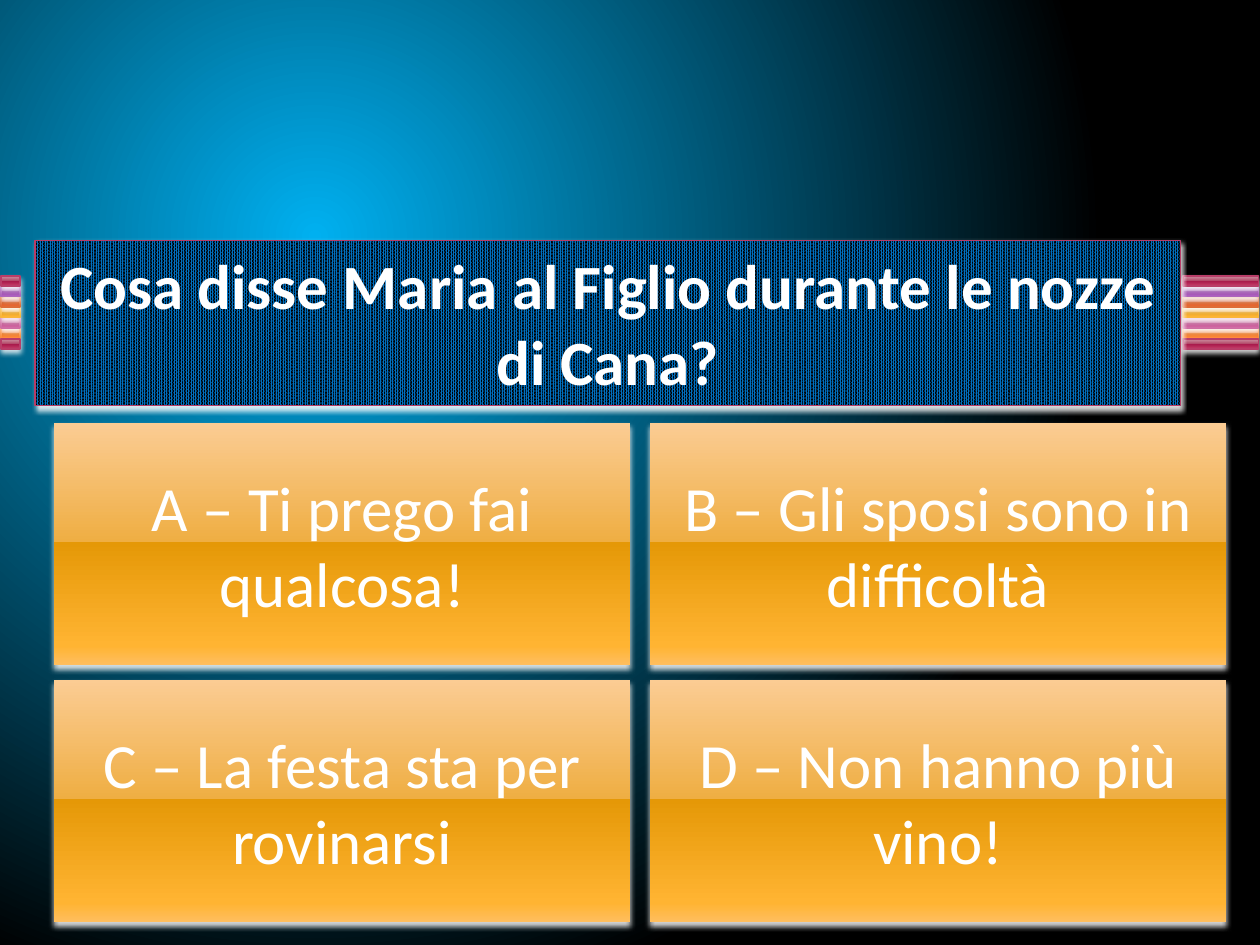
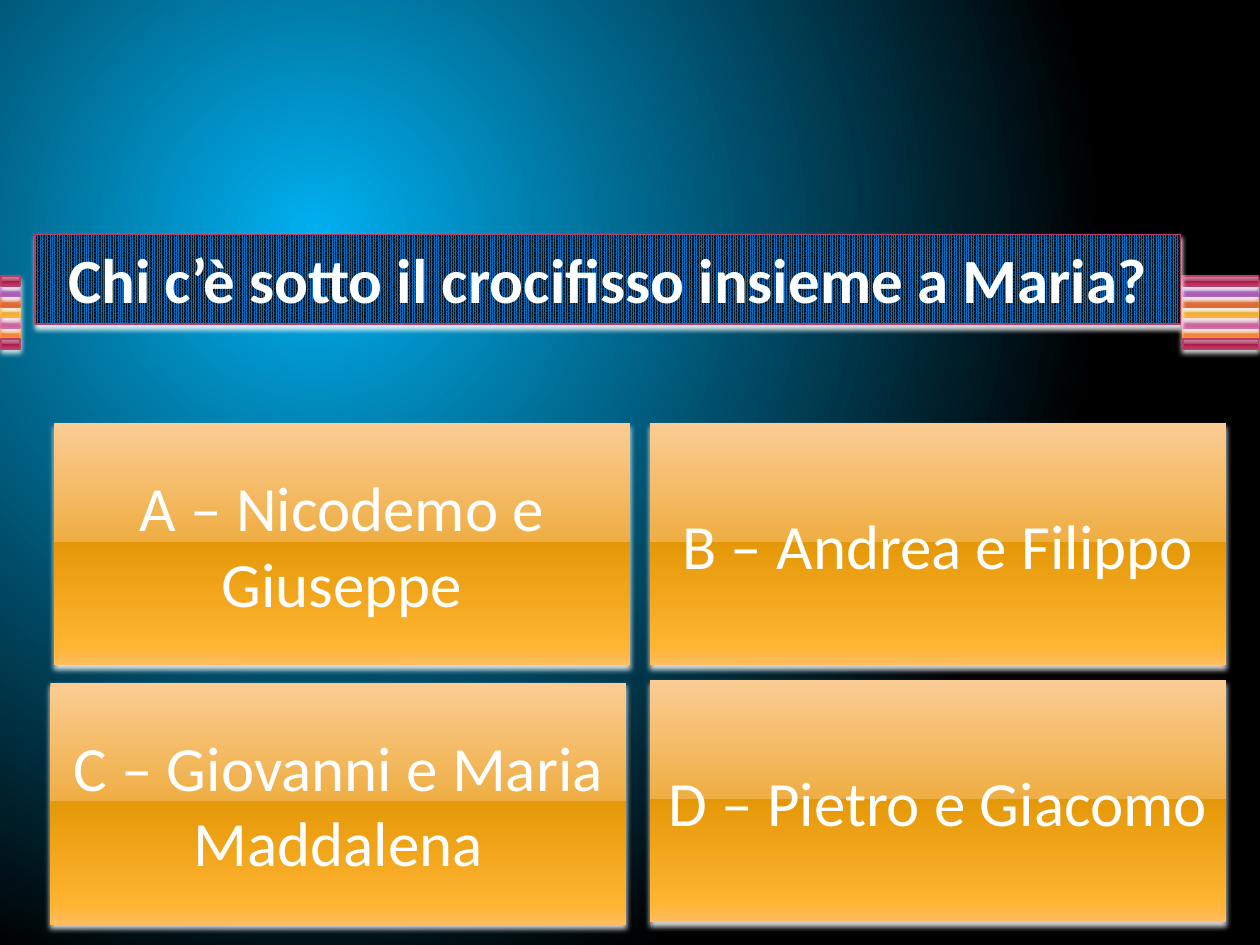
from dataclasses import dataclass

from lxml.etree import SubElement
from pptx import Presentation
from pptx.dml.color import RGBColor
from pptx.enum.dml import MSO_PATTERN
from pptx.enum.shapes import MSO_SHAPE as SHAPE
from pptx.enum.text import MSO_ANCHOR as ANCHOR, MSO_AUTO_SIZE as AUTO_SIZE, PP_ALIGN as ALIGN
from pptx.oxml.ns import qn
from pptx.util import Inches, Pt


@dataclass(frozen=True)
class Theme:
    font: str = "Calibri"
    size: int = 36
    text: str = "FFFFFF"
    shadow: str = "FFFFFF"
    glow: str = "00B0F0"
    dark: str = "000000"
    title_fill: str = "0070C0"
    outline: float = 0.9
    stop_places: tuple = (0, 49, 49, 92, 100)


@dataclass(frozen=True)
class Gloss:
    line: str
    stops: tuple


THEME = Theme()

CRIMSON = Gloss("B83D68", ("CE94A2", "B34869", "A61749", "C13764", "CA5D7C"))
PURPLE = Gloss("AC66BB", ("C6A2D0", "A666B4", "8F3EA1", "AD5DBF", "BA76CA"))
RUST = Gloss("DE6C36", ("E7A493", "D66B42", "CC4809", "E9642C", "F07B55"))
AMBER = Gloss("F9B639", ("FBCC93", "EFAE43", "E59807", "FFB432", "FFBE5F"))
PINK = Gloss("CF6DA4", ("DDA4C1", "C66B9D", "B34181", "D361A0", "DC79AE"))
ORANGE = Gloss("FA8D3D", ("FBB494", "F08745", "E5670B", "FF8736", "FF9961"))

# Stripes as (row, colour), from back to front
STRIPES = [(5, ORANGE), (4, PINK), (3, AMBER), (2, RUST), (1, PURPLE), (0, CRIMSON), (6, CRIMSON)]
STRIPE_TOP, STRIPE_SPAN, STRIPE_HEIGHT = 2.19, 0.5, 0.08
STRIPE_SIDES = [(0.01, 0.15), (9.39, 0.6)]  # left, width

# Two by two grid of answers
GRID_LEFT, GRID_TOP = 0.43, 3.36
ANSWER_W, ANSWER_H = 4.57, 1.92
STEP_X, STEP_Y = 4.73, 2.04

# Question, top and height of its box, answers, offsets of single answers
QUIZ = [
    ("Cosa disse Maria al Figlio durante le nozze di Cana?", 1.91, 1.31,
     ["A – Ti prego fai qualcosa!", "B – Gli sposi sono in difficoltà",
      "C – La festa sta per rovinarsi", "D – Non hanno più vino!"], {}),
    ("Chi c’è sotto il crocifisso insieme a Maria?", 1.86, 0.71,
     ["A – Nicodemo e Giuseppe", "B – Andrea e Filippo",
      "C – Giovanni e Maria Maddalena", "D – Pietro e Giacomo"], {2: (-0.03, 0.02)}),
]


def rgb(value):
    return RGBColor.from_string(value)


def set_gradient(fill, owner, stops):
    """Give the fill any number of stops and return its XML element."""
    fill.gradient()
    grad = owner.find(".//" + qn("a:gradFill"))
    grad.clear()
    gs_list = SubElement(grad, qn("a:gsLst"))
    for place, color in stops:
        gs = SubElement(gs_list, qn("a:gs"), pos=str(place * 1000))
        SubElement(gs, qn("a:srgbClr"), val=color)
    return grad


class QuizDeck:
    def __init__(self, theme):
        self.theme = theme
        self.prs = Presentation()
        self.prs.slide_width, self.prs.slide_height = Inches(10), Inches(7.5)
        self.slide = None
        self.background()

    def background(self):
        master, t = self.prs.slide_master, self.theme
        grad = set_gradient(master.background.fill, master.element, [(0, t.glow), (100, t.dark)])
        circle = SubElement(grad, qn("a:path"), path="circle")
        SubElement(circle, qn("a:fillToRect"), l="50000", t="50000", r="100000", b="100000")

    def new_slide(self):
        self.slide = self.prs.slides.add_slide(self.prs.slide_layouts[6])

    def box(self, shapes, left, top, width, height, line=None):
        sp = shapes.add_shape(SHAPE.RECTANGLE, *map(Inches, (left, top, width, height)))
        if line:
            sp.line.color.rgb = rgb(line)
            sp.line.width = Pt(self.theme.outline)
        else:
            sp.line.fill.background()
        self.shadow(sp)
        return sp

    def shadow(self, sp):
        sp.shadow.inherit = False
        effects = sp.element.spPr.find(qn("a:effectLst"))
        outer = SubElement(effects, qn("a:outerShdw"), blurRad=str(Pt(3.1)), dist=str(Pt(2)),
                           dir="5400000", rotWithShape="0")
        color = SubElement(outer, qn("a:srgbClr"), val=self.theme.shadow)
        SubElement(color, qn("a:alpha"), val="83000")

    def gloss(self, sp, gloss):
        grad = set_gradient(sp.fill, sp.element.spPr, zip(self.theme.stop_places, gloss.stops))
        SubElement(grad, qn("a:lin"), ang="5400000", scaled="0")

    def label(self, sp, text, anchor, bold=False):
        tf = sp.text_frame
        tf.word_wrap = True
        tf.vertical_anchor = anchor
        p = tf.paragraphs[0]
        p.text = text
        p.alignment = ALIGN.CENTER
        p.font.name, p.font.size, p.font.bold = self.theme.font, Pt(self.theme.size), bold
        p.font.color.rgb = rgb(self.theme.text)

    def stripes(self):
        for left, width in STRIPE_SIDES:
            group = self.slide.shapes.add_group_shape()
            for row, color in STRIPES:
                top = STRIPE_TOP + row * STRIPE_SPAN / 6
                sp = self.box(group.shapes, left, top, width, STRIPE_HEIGHT, color.line)
                self.gloss(sp, color)

    def answers(self, texts, offsets):
        for i, text in enumerate(texts):
            row, col = divmod(i, 2)
            dx, dy = offsets.get(i, (0, 0))
            sp = self.box(self.slide.shapes, GRID_LEFT + col * STEP_X + dx,
                          GRID_TOP + row * STEP_Y + dy, ANSWER_W, ANSWER_H)
            self.gloss(sp, AMBER)
            self.label(sp, text, ANCHOR.MIDDLE)

    def question(self, text, top, height):
        sp = self.box(self.slide.shapes, 0.28, top, 9.09, height, CRIMSON.line)
        sp.fill.patterned()
        sp.fill.pattern = MSO_PATTERN.PERCENT_90
        sp.fill.fore_color.rgb = rgb(self.theme.title_fill)
        sp.fill.back_color.rgb = rgb(self.theme.dark)
        self.label(sp, text, ANCHOR.TOP, bold=True)
        sp.text_frame.auto_size = AUTO_SIZE.SHAPE_TO_FIT_TEXT


def main():
    deck = QuizDeck(THEME)
    for question, top, height, answers, offsets in QUIZ:
        deck.new_slide()
        deck.stripes()
        deck.answers(answers, offsets)
        deck.question(question, top, height)
    deck.prs.save("out.pptx")


if __name__ == "__main__":
    main()
